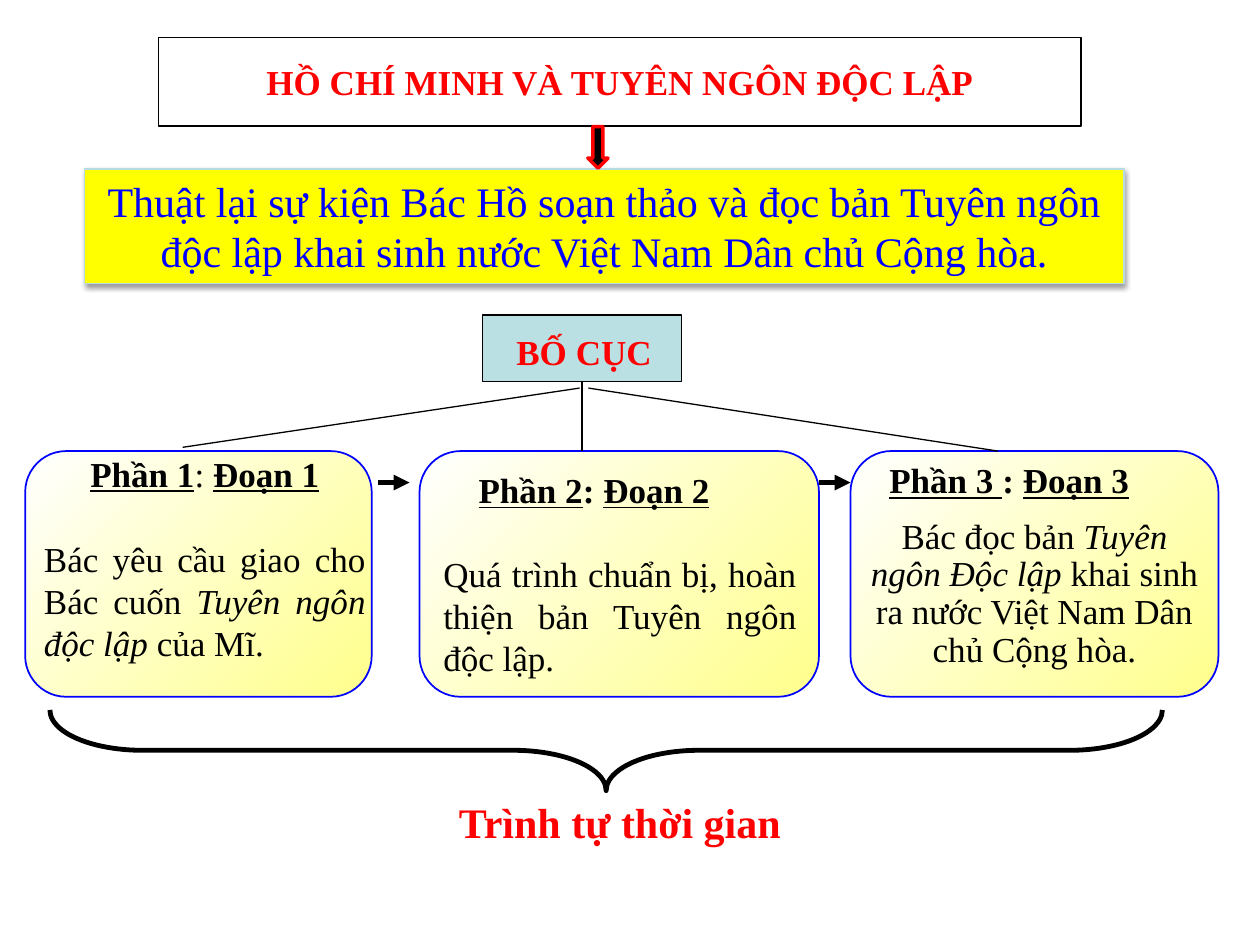
"""Build a one-slide outline of a reading text: topic, three parts and their order."""
from dataclasses import dataclass

from lxml import etree
from pptx import Presentation
from pptx import util as u
from pptx.dml.color import RGBColor
from pptx.enum import shapes, text
from pptx.oxml import ns

LEFT, CENTER, JUSTIFY = text.PP_ALIGN.LEFT, text.PP_ALIGN.CENTER, text.PP_ALIGN.JUSTIFY
TOP, MIDDLE = text.MSO_ANCHOR.TOP, text.MSO_ANCHOR.MIDDLE
Box = tuple[float, float, float, float]
Point = tuple[float, float]


@dataclass(frozen=True)
class Theme:
    font: str = "Times New Roman"
    body: int = 20
    large: int = 24
    black: str = "000000"
    white: str = "FFFFFF"
    red: str = "FF0000"
    blue: str = "0000FF"
    card_line: str = "0101FF"
    card_end: str = "FFFF8B"
    yellow: str = "FFFF00"
    teal: str = "BBE0E3"
    teal_line: str = "B6DCDF"


@dataclass(frozen=True)
class Run:
    text: str
    style: str = ""


@dataclass(frozen=True)
class Para:
    runs: tuple[Run, ...]
    align: text.PP_ALIGN = CENTER
    before: float = 0
    spacing: float = 1.0
    indent: float = 0


@dataclass(frozen=True)
class Part:
    card: Box
    label: Box
    paras: tuple[Para, ...]


T = Theme()
CARD_TOP, CARD_H = 3.58, 1.95

PARTS = (
    Part((0.2, CARD_TOP, 2.75, CARD_H), (0.25, 3.58, 2.75, 2.22), (
        Para((Run("Phần 1", "bu"), Run(": "), Run("Đoạn 1", "bu")), spacing=0.9),
        Para((Run("Bác yêu cầu giao cho Bác cuốn "), Run("Tuyên ngôn độc lập ", "i"),
              Run("của Mĩ.")), JUSTIFY, before=24))),
    Part((3.33, CARD_TOP, 3.17, CARD_H), (3.42, 3.67, 3, 1.78), (
        Para((Run("Phần 2", "bu"), Run(": ", "b"), Run("Đoạn 2", "bu")), LEFT, indent=0.28),
        Para((Run("Quá trình chuẩn bị, hoàn thiện bản Tuyên ngôn độc lập."),),
             JUSTIFY, before=24))),
    Part((6.75, CARD_TOP, 2.92, CARD_H), (6.75, 3.63, 2.92, 1.78), (
        Para((Run("Phần 3 ", "bu"), Run(": ", "b"), Run("Đoạn 3", "bu")),
             LEFT, spacing=0.9, indent=0.21),
        Para((Run("Bác đọc bản "), Run("Tuyên ngôn Độc lập ", "i"),
              Run("khai sinh ra nước Việt Nam Dân chủ Cộng hòa.")),
             before=10, spacing=0.9))),
)


def rgb(color: str) -> RGBColor:
    return RGBColor.from_string(color)


def write(sp, paras: tuple[Para, ...], color: str = T.black, size: int = T.body,
          anchor: text.MSO_ANCHOR = TOP, wrap: bool = True) -> None:
    tf = sp.text_frame
    tf.word_wrap, tf.vertical_anchor = wrap, anchor
    for i, para in enumerate(paras):
        p = tf.add_paragraph() if i else tf.paragraphs[0]
        fmt = {"alignment": para.align, "line_spacing": para.spacing,
               "space_before": u.Pt(para.before)}
        for name, value in fmt.items():
            setattr(p, name, value)
        if para.indent:
            p._p.get_or_add_pPr().set("marL", str(u.Inches(para.indent)))
        for run in para.runs:
            r = p.add_run()
            r.text = run.text
            r.font.color.rgb = rgb(color)
            font = {"name": T.font, "size": u.Pt(size), "bold": "b" in run.style,
                    "italic": "i" in run.style, "underline": "u" in run.style}
            for name, value in font.items():
                setattr(r.font, name, value)


def add_shape(s, kind: shapes.MSO_SHAPE, box: Box, line: str, width: float,
              fill: str | None = None, rotation: float = 0):
    sp = s.shapes.add_shape(kind, *map(u.Inches, box))
    sp.shadow.inherit = False
    sp.rotation = rotation
    sp.line.color.rgb, sp.line.width = rgb(line), u.Pt(width)
    if fill:
        sp.fill.solid()
        sp.fill.fore_color.rgb = rgb(fill)
    else:
        sp.fill.background()
    return sp


def add_label(s, box: Box, paras: tuple[Para, ...], color: str = T.black,
              size: int = T.body) -> None:
    write(s.shapes.add_textbox(*map(u.Inches, box)), paras, color, size)


def add_card(s, box: Box) -> None:
    sp = add_shape(s, shapes.MSO_SHAPE.FLOWCHART_ALTERNATE_PROCESS, box, T.card_line, 1)
    sp.fill.gradient()
    sp.fill.gradient_angle = 315
    for stop, color in zip(sp.fill.gradient_stops, (T.white, T.card_end)):
        stop.color.rgb = rgb(color)


def add_line(s, start: Point, end: Point, width: float = 0.75, arrow: bool = False):
    cx = s.shapes.add_connector(shapes.MSO_CONNECTOR.STRAIGHT,
                                *map(u.Inches, (*start, *end)))
    cx.line.color.rgb, cx.line.width = rgb(T.black), u.Pt(width)
    if arrow:
        etree.SubElement(cx.line._get_or_add_ln(), ns.qn("a:tailEnd"), type="triangle")
    etree.SubElement(cx._element.spPr, ns.qn("a:effectLst"))
    return cx


def add_shadow(sp) -> None:
    effects = sp._element.spPr.find(ns.qn("a:effectLst"))
    shadow = etree.SubElement(effects, ns.qn("a:outerShdw"), blurRad="40000",
                              dist="20000", dir="5400000", rotWithShape="0")
    color = etree.SubElement(shadow, ns.qn("a:srgbClr"), val=T.black)
    etree.SubElement(color, ns.qn("a:alpha"), val="38000")


def main() -> None:
    prs = Presentation()
    prs.slide_width, prs.slide_height = u.Inches(10), u.Inches(7.5)
    s = prs.slides.add_slide(prs.slide_layouts[6])
    rect = shapes.MSO_SHAPE.RECTANGLE

    for part in PARTS:
        add_card(s, part.card)
        add_label(s, part.label, part.paras)

    layout = add_shape(s, rect, (3.83, 2.5, 1.58, 0.53), T.black, 0.75, T.teal)
    add_label(s, (4, 2.57, 1.33, 0.43), (Para((Run("BỐ CỤC", "b"),), LEFT),), T.red)
    add_line(s, (4.6, 3.08), (1.45, 3.55))
    add_line(s, (4.62, 3.03), (4.62, CARD_TOP)).begin_connect(layout, 2)
    add_line(s, (4.67, 3.08), (7.92, CARD_TOP))
    for x in (3, 6.5):
        add_line(s, (x, 3.83), (x + 0.25, 3.83), 3, arrow=True)

    brace = add_shape(s, shapes.MSO_SHAPE.RIGHT_BRACE, (4.49, 1.54, 0.64, 8.83),
                      T.black, 2.75, rotation=90)
    brace.adjustments[0] = 1.146
    add_label(s, (2.71, 6.27, 4.42, 0.51), (Para((Run("Trình tự thời gian", "b"),)),),
              T.red, T.large)

    title = add_shape(s, rect, (1.26, 0.3, 7.32, 0.7), T.black, 0.75, T.white)
    write(title, (Para((Run("HỒ CHÍ MINH VÀ TUYÊN NGÔN ĐỘC LẬP", "b"),)),), T.red,
          anchor=MIDDLE, wrap=False)
    summary = add_shape(s, rect, (0.67, 1.34, 8.25, 0.91), T.teal_line, 0.75, T.yellow)
    add_shadow(summary)
    write(summary, (Para((Run("Thuật lại sự kiện Bác Hồ soạn thảo và đọc bản Tuyên ngôn "
                              "độc lập khai sinh nước Việt Nam Dân chủ Cộng hòa."),)),),
          T.blue, T.large)
    add_shape(s, shapes.MSO_SHAPE.RIGHT_ARROW, (4.58, 1.09, 0.33, 0.16), T.red, 2,
              T.black, rotation=90)
    prs.save("out.pptx")


if __name__ == "__main__":
    main()
